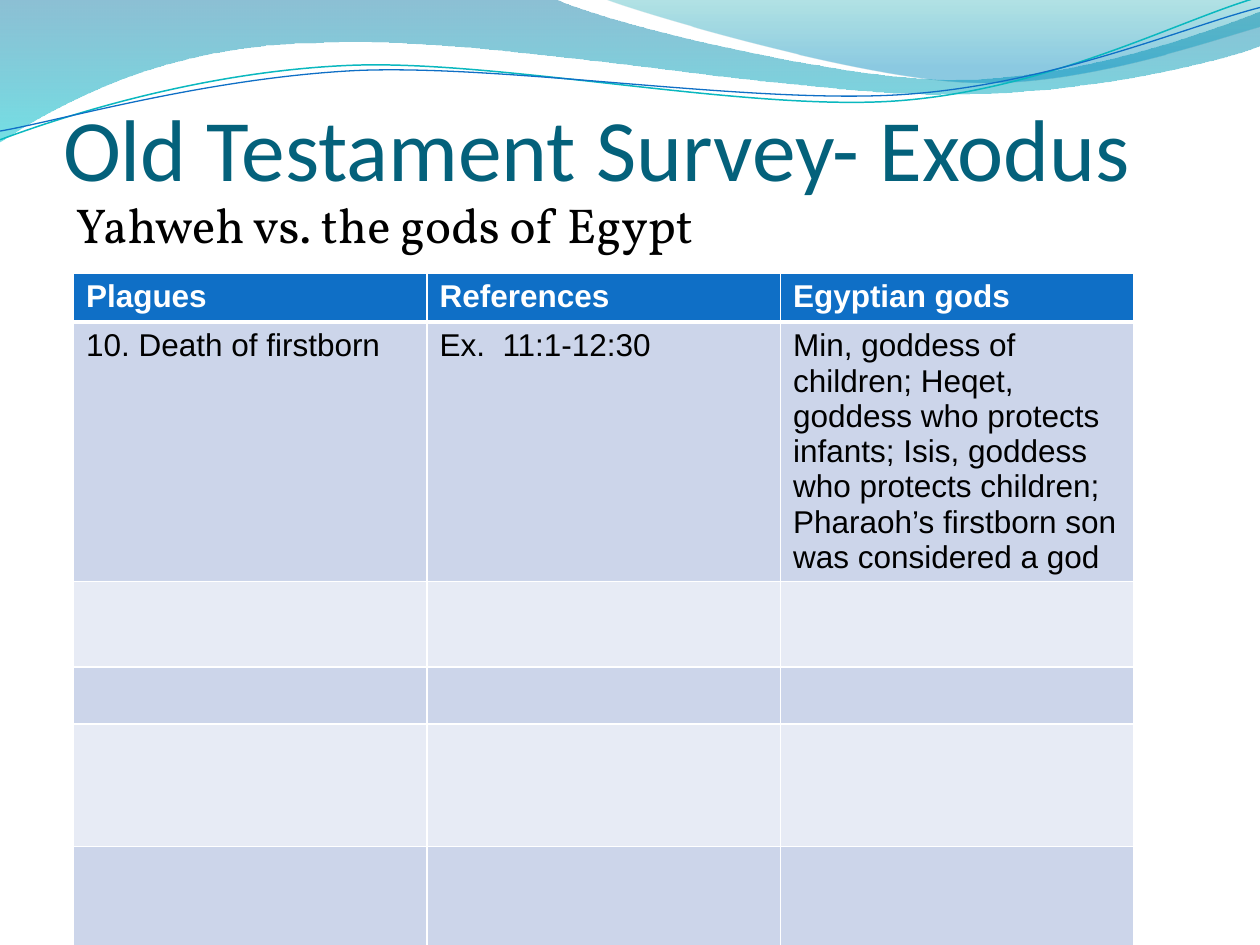
from lxml.etree import SubElement
from math import cos, radians, sin
from pptx import Presentation
from pptx.dml.color import RGBColor
from pptx.enum.text import MSO_ANCHOR as Anchor, MSO_AUTO_SIZE as AutoSize, PP_ALIGN as Align
from pptx.oxml.ns import qn
from pptx.util import Pt

WHITE, BLACK, BLUE = "FFFFFF", "000000", "0F6FC6"
BANDS = ("CCD5EA", "E7EBF5")
LINE_TILT = -2.7

# Outlines in points: a pair is a straight step, six numbers are a Bezier curve
LONG_WAVE = [(0, -0.7), (316.8, -0.7),
             (342.7, 12.2, 478.1, 45.4, 545.8, 45.4),
             (614.2, 45.4, 689.8, 18.7, 720, 6.5), (720.7, 25.9),
             (707.8, 31.7, 626.4, 54.7, 537.1, 54),
             (447.8, 54, 275, 20.2, 185, 24.5),
             (92.9, 25.2, 33.1, 59.8, -0.7, 81.4), (0, -0.7)]
RIGHT_WAVE = [(344.9, -0.7), (366.5, 7.9, 491, 44.6, 553.7, 46.8),
              (616.3, 49.7, 691.9, 23, 720, 15.1), (720, 0), (344.9, -0.7)]
TEAL_LINE = [(0, 79.9), (34.6, 67, 113.8, 41, 199.4, 37.4),
             (284.4, 33.8, 427, 64.1, 513.4, 57.6),
             (599.8, 51.1, 675.4, 10.8, 718.6, -1.4)]
BLUE_LINE = [(0, 74.9), (33.8, 69.1, 118.1, 44.6, 203.8, 40.3),
             (290.2, 36.7, 429.8, 59.8, 516.2, 54),
             (601.9, 48.2, 677.5, 15.1, 720, 4.3)]

HEADINGS = ["Plagues", "References", "Egyptian gods"]
PLAGUE = ["10. Death of firstborn", "Ex.  11:1-12:30",
          "Min, goddess of children; Heqet, goddess who protects infants; "
          "Isis, goddess who protects children; "
          "Pharaoh’s firstborn son was considered a god"]
ROW_HEIGHTS = [28, 103, 49, 32.5, 70, 70, 28, 28]


def color(value):
    return RGBColor.from_string(value)


def place(shape, left, top, width, height):
    shape.left, shape.top, shape.width, shape.height = map(Pt, (left, top, width, height))


def format_text(para, font, size, value, bold=False):
    for span in para.runs:
        span.font.name, span.font.size, span.font.bold = font, Pt(size), bold
        span.font.color.rgb = color(value)


def turn(step, angle, center):
    """Rotate every point of a step clockwise about the center."""
    c, s = cos(radians(angle)), sin(radians(angle))
    turned = []
    for x, y in zip(step[::2], step[1::2]):
        dx, dy = x - center[0], y - center[1]
        turned += [center[0] + dx * c - dy * s, center[1] + dx * s + dy * c]
    return turned


def draw_outline(shapes, outline, close):
    ends = [(Pt(step[-2]), Pt(step[-1])) for step in outline]
    builder = shapes.build_freeform(*ends[0])
    builder.add_line_segments(ends[1:-1] if close else ends[1:], close=close)
    shape = builder.convert_to_shape()
    shape.shadow.inherit = False
    # Bend the straight segments that have control points
    for segment, step in zip(list(shape.element.iter(qn("a:lnTo"))), outline[1:]):
        if len(step) == 6:
            segment.tag = qn("a:cubicBezTo")
            segment.remove(segment[0])
            for x, y in zip(step[::2], step[1::2]):
                SubElement(segment, qn("a:pt"), x=str(Pt(x) - shape.left),
                           y=str(Pt(y) - shape.top))
    return shape


def add_wave(shapes, outline, stops):
    wave = draw_outline(shapes, outline, True)
    wave.line.fill.background()
    wave.fill.gradient()
    wave.fill.gradient_angle = 270
    for stop, (position, value, _) in zip(wave.fill.gradient_stops, stops):
        stop.position = position
        stop.color.rgb = color(value)
    for tint, (_, _, opacity) in zip(wave.element.iter(qn("a:srgbClr")), stops):
        SubElement(tint, qn("a:alpha"), val=str(opacity * 1000))
    return wave


def add_wave_line(shapes, outline, value, width):
    level = [turn(step, -LINE_TILT, (359.6, 41.8)) for step in outline]
    line = draw_outline(shapes, level, False)
    line.rotation = LINE_TILT
    line.fill.background()
    line.line.color.rgb = color(value)
    line.line.width = Pt(width)


def add_banner(page, master):
    """Draw the waves and hand them to the slide master, behind its placeholders."""
    waves = [add_wave(page.shapes, LONG_WAVE, [(0, "0074A1", 45), (1, "00C6CF", 55)]),
             add_wave(page.shapes, RIGHT_WAVE, [(0, "00A1A9", 30), (0.8, "008BBF", 45)])]
    lines = page.shapes.add_group_shape()
    add_wave_line(lines.shapes, TEAL_LINE, "0AB8BF", 0.85)
    add_wave_line(lines.shapes, BLUE_LINE, BLUE, 0.75)
    first = master.placeholders[0].element
    number = 100
    for part in waves + [lines]:
        first.addprevious(part.element)
        for label in part.element.iter(qn("p:cNvPr")):
            label.set("id", str(number))
            number += 1


def fill_title(title, box):
    place(title, *box)
    frame = title.text_frame
    frame.text = "Old Testament Survey- Exodus"
    frame.auto_size = AutoSize.NONE
    frame.vertical_anchor = Anchor.BOTTOM
    frame.margin_left = frame.margin_right = frame.margin_bottom = 0
    para = frame.paragraphs[0]
    para.alignment = Align.LEFT
    format_text(para, "Calibri", 50, "04617B")


def fill_body(body, box):
    place(body, *box)
    frame = body.text_frame
    frame.text = "Yahweh vs. the gods of Egypt"
    frame.auto_size = AutoSize.NONE
    para = frame.paragraphs[0]
    para.line_spacing = 0.8
    format_text(para, "Vollkorn", 28, BLACK)
    # Hanging indent without a bullet
    props = para._p.get_or_add_pPr()
    props.set("marL", str(Pt(48)))
    props.set("indent", str(-Pt(48)))
    SubElement(props, qn("a:buNone"))


def add_borders(cell, top, bottom):
    props = cell._tc.get_or_add_tcPr()
    for side, width in (("L", 1), ("R", 1), ("T", top), ("B", bottom)):
        edge = SubElement(props, qn("a:ln" + side), w=str(Pt(width)))
        SubElement(SubElement(edge, qn("a:solidFill")), qn("a:srgbClr"), val=WHITE)


def add_plague_table(page, left, top, width):
    texts = [HEADINGS, PLAGUE]
    table = page.shapes.add_table(len(ROW_HEIGHTS), len(HEADINGS), Pt(left), Pt(top),
                                  Pt(width), Pt(sum(ROW_HEIGHTS))).table
    for index, height in enumerate(ROW_HEIGHTS):
        row = table.rows[index]
        row.height = Pt(height)
        header = index == 0
        for column, cell in enumerate(row.cells):
            add_borders(cell, 3 if index == 1 else 1, 3 if header else 1)
            cell.fill.solid()
            cell.fill.fore_color.rgb = color(BLUE if header else BANDS[(index - 1) % 2])
            if index < len(texts):
                cell.text = texts[index][column]
                format_text(cell.text_frame.paragraphs[0], "Arial", 18,
                            WHITE if header else BLACK, header)


def main():
    deck = Presentation()
    deck.slide_width, deck.slide_height = Pt(720), Pt(540)
    page = deck.slides.add_slide(deck.slide_layouts[1])
    add_banner(page, deck.slide_master)
    fill_title(page.shapes.title, (36, 42, 648, 72))
    fill_body(page.placeholders[1], (36, 114, 648, 384))
    add_plague_table(page, 42, 156, 606)
    deck.save("out.pptx")


if __name__ == "__main__":
    main()
